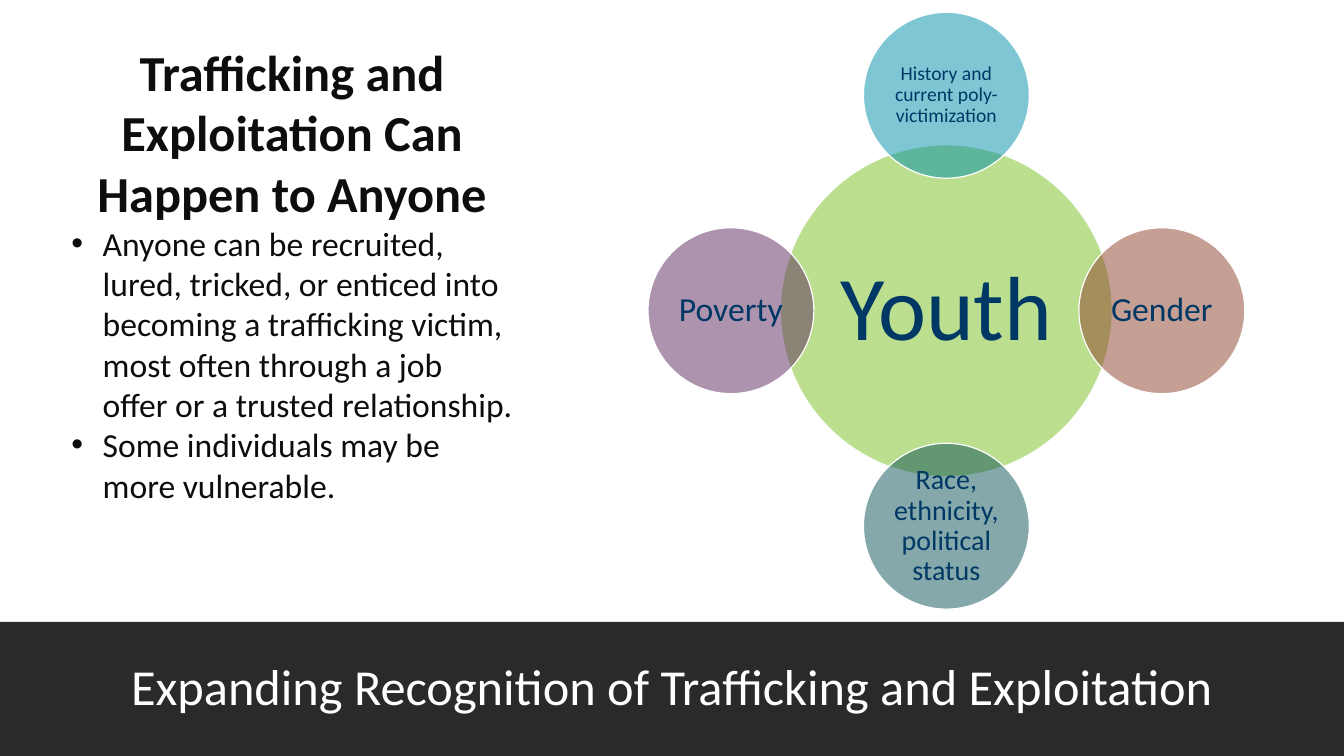
"""Builds a slide on trafficking risk with a radial diagram of vulnerability factors."""
from lxml import etree
from pptx import Presentation
from pptx.dml.color import RGBColor
from pptx.enum.shapes import MSO_SHAPE
from pptx.enum.text import MSO_ANCHOR, PP_ALIGN
from pptx.oxml.ns import qn
from pptx.util import Cm, Pt

RECTANGLE, OVAL = MSO_SHAPE.RECTANGLE, MSO_SHAPE.OVAL
TOP, MIDDLE = MSO_ANCHOR.TOP, MSO_ANCHOR.MIDDLE
LEFT, CENTER = PP_ALIGN.LEFT, PP_ALIGN.CENTER

FONT = "Calibri"
COLORS = {
    "white": "FFFFFF", "ink": "0D0D0D", "navy": "003865", "youth": "78BE21",
    "history": "008EAA", "gender": "8D3F2B", "race": "0D5257", "poverty": "5D295F",
}
HEADING = "Trafficking and Exploitation Can Happen to Anyone"
POINTS = [
    "Anyone can be recruited, lured, tricked, or enticed into becoming a trafficking "
    "victim, most often through a job offer or a trusted relationship.",
    "Some individuals may be more vulnerable.",
]
FACTORS = [
    ("History and current poly-victimization", 14, "history", 0, -1),
    ("Gender", 24, "gender", 1, 0),
    ("Race, ethnicity, political status", 20, "race", 0, 1),
    ("Poverty", 24, "poverty", -1, 0),
]


def rgb(name):
    """Return the palette colour of that name."""
    return RGBColor.from_string(COLORS[name])


def add_panel(slide, kind, box, fill, opacity, outline=None):
    """Add a translucent shape in a (left, top, width, height) box in cm."""
    panel = slide.shapes.add_shape(kind, *(Cm(length) for length in box))
    panel.shadow.inherit = False
    panel.fill.solid()
    panel.fill.fore_color.rgb = rgb(fill)
    color = next(panel._element.spPr.iter(qn("a:srgbClr")))
    etree.SubElement(color, qn("a:alpha"), val=str(opacity * 1000))
    if outline is None:
        panel.line.fill.background()
    else:
        panel.line.color.rgb = rgb("white")
        panel.line.width = Pt(outline)
    panel.text_frame.word_wrap = True
    return panel


def style(paragraph, size, color, align=CENTER, bold=False, spacing=None):
    """Set alignment, line spacing and font of a paragraph."""
    paragraph.alignment = align
    paragraph.line_spacing = spacing
    font = paragraph.font
    font.name, font.size, font.bold = FONT, Pt(size), bold
    font.color.rgb = rgb(color)


def add_bullet(paragraph, indent):
    """Give a paragraph a round bullet with a hanging indent in cm."""
    properties = paragraph._p.get_or_add_pPr()
    properties.set("marL", str(Cm(indent)))
    properties.set("indent", str(-Cm(indent)))
    etree.SubElement(properties, qn("a:buFont"), typeface="Arial")
    etree.SubElement(properties, qn("a:buChar"), char="•")


def add_title_band(slide, box):
    """Add the dark band with the slide title."""
    frame = add_panel(slide, RECTANGLE, box, "ink", 88).text_frame
    frame.vertical_anchor = MIDDLE
    frame.text = "Expanding Recognition of Trafficking and Exploitation"
    style(frame.paragraphs[0], 36, "white", spacing=0.9)


def add_message(slide, box):
    """Add the heading and its bulleted points."""
    frame = add_panel(slide, RECTANGLE, box, "white", 90, 10).text_frame
    frame.vertical_anchor = TOP
    frame.text = HEADING
    style(frame.paragraphs[0], 36, "ink", bold=True)
    for point in POINTS:
        paragraph = frame.add_paragraph()
        paragraph.text = point
        add_bullet(paragraph, 0.79)
        style(paragraph, 24, "ink", LEFT)


def add_circle(slide, center_x, center_y, diameter, label, size, fill, inset):
    """Add a labelled circle around a centre point in cm."""
    box = (center_x - diameter / 2, center_y - diameter / 2, diameter, diameter)
    frame = add_panel(slide, OVAL, box, fill, 50, 0.85).text_frame
    frame.margin_left = frame.margin_right = Cm(inset)
    frame.margin_top = frame.margin_bottom = Cm(inset)
    frame.vertical_anchor = MIDDLE
    frame.text = label
    style(frame.paragraphs[0], size, "navy", spacing=0.9)


def add_factor_diagram(slide, box):
    """Add the youth circle with the factors around it, filling a square box."""
    left, top, side, _ = box
    center_x, center_y = left + side / 2, top + side / 2
    youth = side * 0.556
    factor = youth / 2
    orbit = (side - factor) / 2
    add_circle(slide, center_x, center_y, youth, "Youth", 65, "youth", 0.23)
    for label, size, fill, across, down in FACTORS:
        add_circle(slide, center_x + across * orbit, center_y + down * orbit,
                   factor, label, size, fill, 0.06)


def main():
    """Build and save the slide."""
    presentation = Presentation()
    presentation.slide_width, presentation.slide_height = Cm(33.87), Cm(19.05)
    slide = presentation.slides.add_slide(presentation.slide_layouts[6])
    add_title_band(slide, (0, 15.67, 33.87, 3.38))
    add_message(slide, (1.55, 0.91, 11.63, 13.84))
    add_factor_diagram(slide, (16.33, 0.31, 15.04, 15.04))
    presentation.save("out.pptx")


if __name__ == "__main__":
    main()
